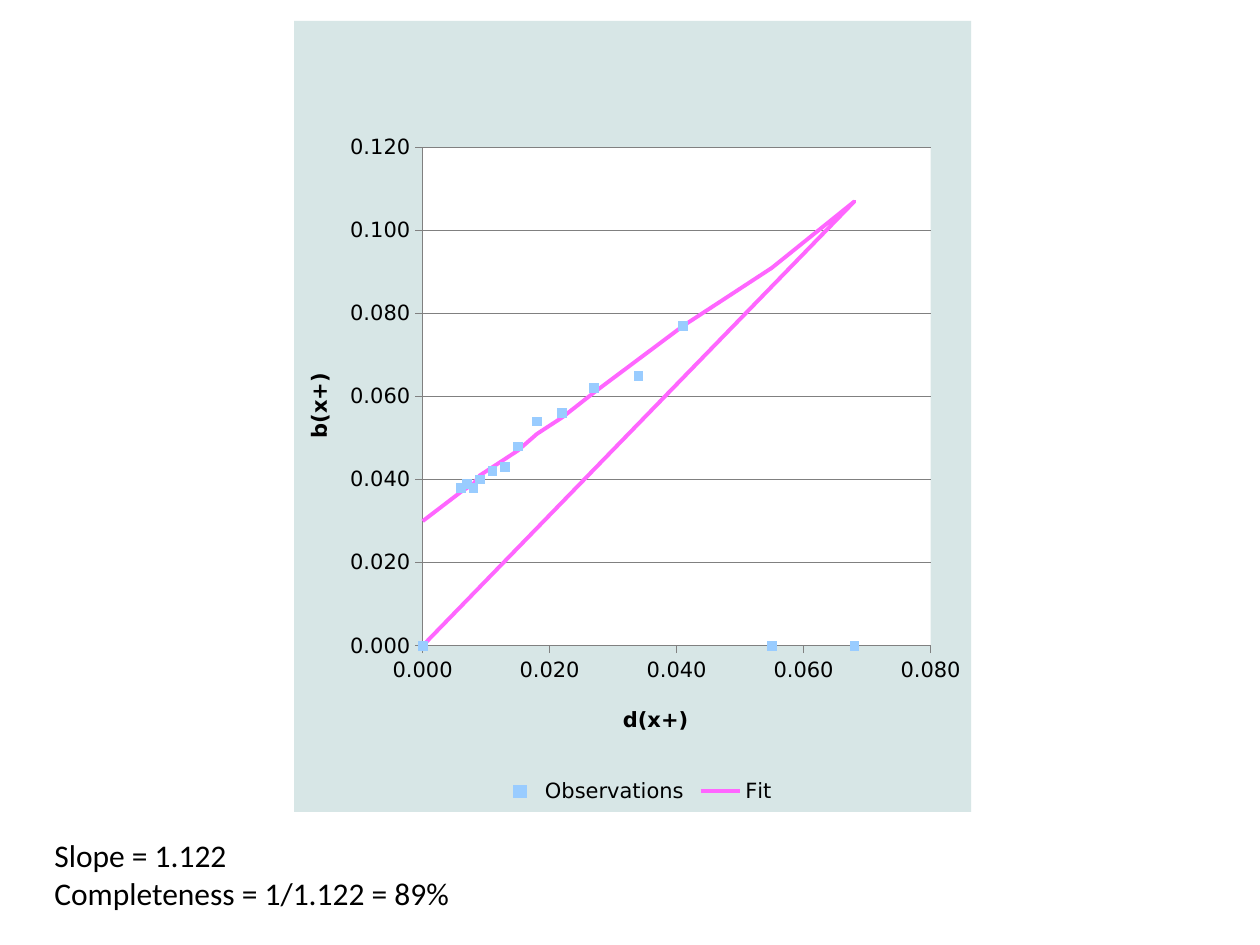
from lxml import etree
from pptx import Presentation
from pptx.chart.data import XyChartData
from pptx.dml.color import RGBColor
from pptx.enum.chart import XL_CHART_TYPE, XL_LEGEND_POSITION, XL_MARKER_STYLE
from pptx.enum.text import MSO_AUTO_SIZE
from pptx.oxml import parse_xml
from pptx.oxml.ns import nsdecls, qn
from pptx.util import Pt

SCATTER = XL_CHART_TYPE.XY_SCATTER
BOTTOM = XL_LEGEND_POSITION.BOTTOM
SQUARE = XL_MARKER_STYLE.SQUARE
NO_MARKER = XL_MARKER_STYLE.NONE
GROW = MSO_AUTO_SIZE.SHAPE_TO_FIT_TEXT

BLACK, GREY, WHITE = "000000", "808080", "FFFFFF"
PANEL, SKY, PINK = "D7E6E6", "99CCFF", "FF66FF"
NUMBER_FORMAT = "0.000"

DEATHS = [0, 0.006, 0.007, 0.008, 0.009, 0.011, 0.013, 0.015, 0.018,
          0.022, 0.027, 0.034, 0.041, 0.055, 0.068, None, None]
OBSERVED = [None, 0.038, 0.039, 0.038, 0.04, 0.042, 0.043, 0.048, 0.054,
            0.056, 0.062, 0.065, 0.077, None, None, None, None]
FITTED = [0.03, 0.037, 0.038, 0.039, 0.041, 0.043, 0.045, 0.047, 0.051,
          0.055, 0.061, 0.069, 0.077, 0.091, 0.107, None, None]


def rgb(value):
    """Turn a hex string into a colour."""
    return RGBColor.from_string(value)


def style_font(font, name, size, bold=False):
    """Set the face, size, weight and black colour of a font."""
    font.name, font.size, font.bold = name, Pt(size), bold
    font.color.rgb = rgb(BLACK)


def set_line(line, color, width):
    """Give a line a solid colour and a width."""
    line.color.rgb = rgb(color)
    line.width = Pt(width)


def fill_xml(color):
    """Return chart shape properties with a solid fill and no outline."""
    return parse_xml(
        f'<c:spPr {nsdecls("c", "a")}><a:solidFill><a:srgbClr val="{color}"/>'
        "</a:solidFill><a:ln><a:noFill/></a:ln></c:spPr>")


def place(element, index, target=None, **fractions):
    """Fix the place of a chart part in fractions of the chart."""
    for old in element.findall(qn("c:layout")):
        element.remove(old)
    layout = etree.Element(qn("c:layout"))
    manual = etree.SubElement(layout, qn("c:manualLayout"))
    settings = {"layoutTarget": target} if target else {}
    settings.update(xMode="edge", yMode="edge", **fractions)
    for name, value in settings.items():
        etree.SubElement(manual, qn(f"c:{name}")).set("val", str(value))
    element.insert(index, layout)


def blank_as_zero(body):
    """Leave missing values empty and draw them at zero."""
    for point in list(body.iter(qn("c:pt"))):
        if point.findtext(qn("c:v")) in ("None", ""):
            point.getparent().remove(point)
    body.find(qn("c:dispBlanksAs")).set("val", "zero")


def style_axis(axis, title, maximum, x, y):
    """Set the scale, line and title of one axis."""
    axis.minimum_scale, axis.maximum_scale, axis.major_unit = 0, maximum, 0.02
    axis.tick_labels.number_format = NUMBER_FORMAT
    axis.tick_labels.number_format_is_linked = False
    set_line(axis.format.line, GREY, 0.75)
    frame = axis.axis_title.text_frame
    frame.text = title
    style_font(frame.paragraphs[0].runs[0].font, "DejaVu Sans", 12, True)
    place(axis.axis_title._element, 1, x=x, y=y)


def style_series(observations, fit):
    """Show observations as squares and the fit as a line."""
    observations.format.line.fill.background()
    marker = observations.marker
    marker.style, marker.size = SQUARE, 5
    marker.format.fill.solid()
    marker.format.fill.fore_color.rgb = rgb(SKY)
    set_line(marker.format.line, SKY, 0.75)
    fit.marker.style = NO_MARKER
    set_line(fit.format.line, PINK, 2.25)
    observations.smooth = fit.smooth = False


def add_scatter(page):
    """Add the scatter chart with its fitted line."""
    data = XyChartData(number_format=NUMBER_FORMAT)
    for name, values in (("Observations", OBSERVED), ("Fit", FITTED)):
        series = data.add_series(name)
        for x, y in zip(DEATHS, values):
            series.add_data_point(x, y)
    chart = page.shapes.add_chart(
        SCATTER, Pt(168), Pt(12), Pt(387), Pt(452), data).chart
    chart.has_title = False
    style_font(chart.font, "DejaVu Sans", 12)
    plot = chart.plots[0]
    plot.vary_by_categories = False
    style_series(*plot.series)

    style_axis(chart.category_axis, "d(x+)", 0.08, 0.48, 0.86)
    style_axis(chart.value_axis, "b(x+)", 0.12, 0.01, 0.44)
    chart.category_axis.has_major_gridlines = False
    set_line(chart.value_axis.major_gridlines.format.line, GREY, 0.75)

    chart.has_legend = True
    chart.legend.position = BOTTOM
    chart.legend.include_in_layout = False
    place(chart.legend._element, 1, x=0.29, y=0.96, w=0.43, h=0.04)

    body = chart.element.find(qn("c:chart"))
    blank_as_zero(body)
    body.addnext(fill_xml(PANEL))
    area = body.find(qn("c:plotArea"))
    area.append(fill_xml(WHITE))
    place(area, 0, "inner", x=0.19, y=0.16, w=0.75, h=0.63)


def add_note(page, lines):
    """Add a text box with one paragraph per line."""
    box = page.shapes.add_textbox(Pt(24), Pt(474), Pt(288), Pt(51))
    frame = box.text_frame
    frame.word_wrap = True
    frame.auto_size = GROW
    frame.text = "\n".join(lines)
    for para in frame.paragraphs:
        for span in para.runs:
            style_font(span.font, "Calibri", 18)


def main():
    """Build the slide and save it."""
    deck = Presentation()
    deck.slide_width, deck.slide_height = Pt(720), Pt(540)
    page = deck.slides.add_slide(deck.slide_layouts[6])
    add_scatter(page)
    add_note(page, ["Slope = 1.122", "Completeness = 1/1.122 = 89%"])
    deck.save("out.pptx")


if __name__ == "__main__":
    main()
